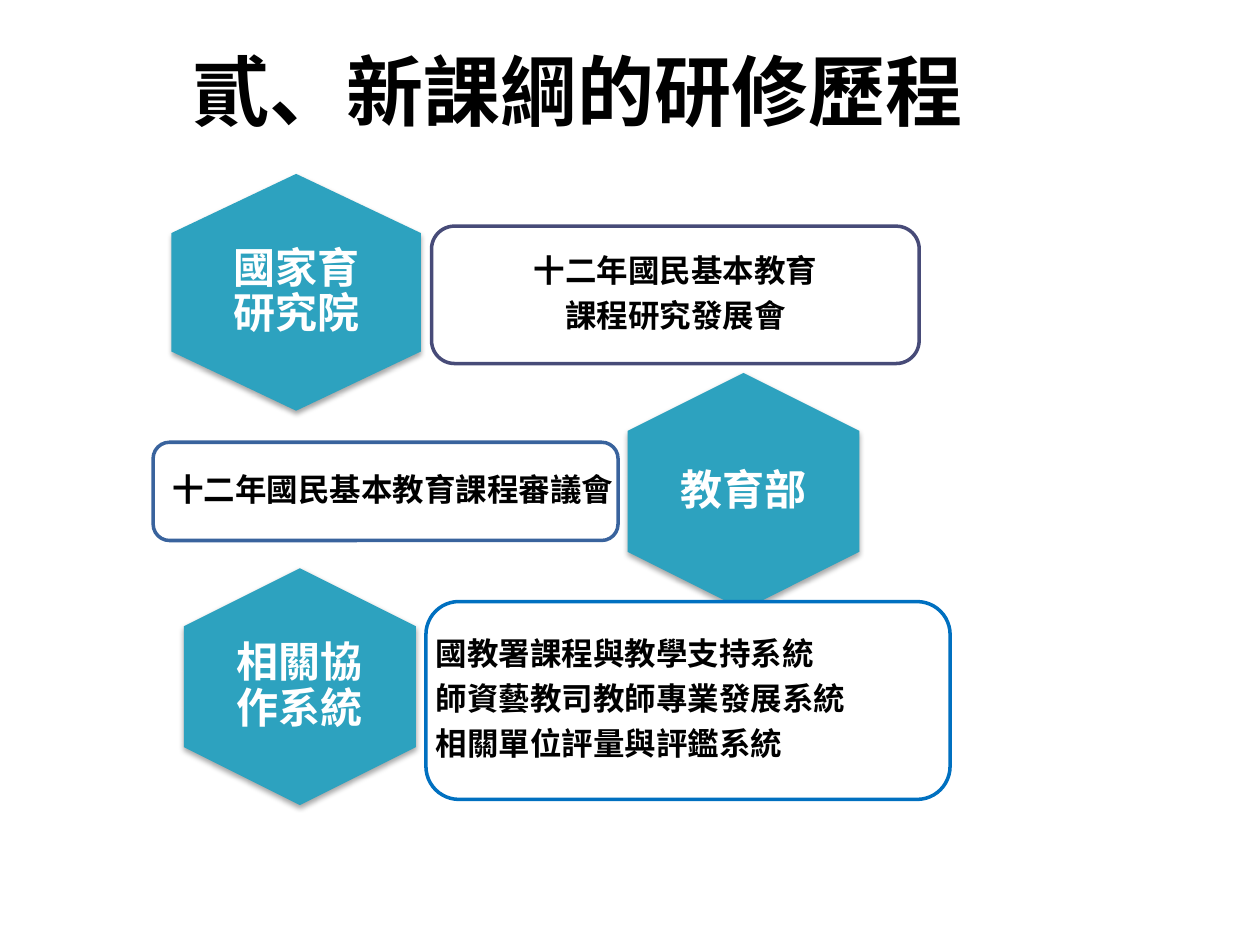
from lxml.etree import SubElement
from pptx import Presentation
from pptx.dml.color import RGBColor
from pptx.enum.shapes import MSO_SHAPE
from pptx.enum.text import MSO_ANCHOR, PP_ALIGN
from pptx.oxml import parse_xml
from pptx.oxml.ns import nsdecls, qn
from pptx.util import Inches, Pt

SOFT_SHADOW = (
    f'<a:effectLst {nsdecls("a")}>'
    '<a:outerShdw blurRad="39370" dist="22860" dir="5400000" rotWithShape="0">'
    '<a:srgbClr val="000000"><a:alpha val="35000"/></a:srgbClr>'
    '</a:outerShdw></a:effectLst>'
)


def color(hex_value):
    return RGBColor.from_string(hex_value)


class Deck:
    font_name = "Noto Sans CJK SC"
    accent, black, white = "2DA2BF", "000000", "FFFFFF"

    def __init__(self, slide):
        self.slide = slide

    def text(self, lines, box, size, ink, margin=0, align=PP_ALIGN.CENTER, **paragraph_format):
        frame = self.slide.shapes.add_textbox(*map(Inches, box)).text_frame
        frame.word_wrap = True
        frame.vertical_anchor = MSO_ANCHOR.MIDDLE
        for side in ("left", "right", "top", "bottom"):
            setattr(frame, f"margin_{side}", Inches(margin))
        frame.text = "\n".join(lines)
        for paragraph in frame.paragraphs:
            for name, value in {"alignment": align, **paragraph_format}.items():
                setattr(paragraph, name, value)
            run = paragraph.runs[0]
            for name, value in {"name": self.font_name, "size": Pt(size), "bold": True}.items():
                setattr(run.font, name, value)
            run.font.color.rgb = color(ink)
            SubElement(run.font._element, qn("a:ea"), typeface=self.font_name)
        return frame

    def centred_text(self, lines, center, size, font_size, ink, **options):
        (x, y), (width, height) = center, size
        box = (x - width / 2, y - height / 2, width, height)
        self.text(lines, box, font_size, ink, line_spacing=0.9,
                  space_after=Pt(round(0.35 * font_size, 1)), **options)

    def upright(self, kind, center, size, fill):
        """Add a preset turned by 90 degrees; size is as seen after the turn."""
        (x, y), (width, height) = center, size
        shape = self.slide.shapes.add_shape(
            kind, Inches(x - height / 2), Inches(y - width / 2), Inches(height), Inches(width))
        shape.rotation = 90
        shape.shadow.inherit = False
        shape.fill.solid()
        shape.fill.fore_color.rgb = color(fill)
        return shape

    def title(self, wording, box):
        frame = self.text([wording], box, 44, self.black, margin=0.05)
        frame.vertical_anchor = MSO_ANCHOR.TOP

    def organisation(self, name, center, width, height=1.88):
        hexagon = self.upright(MSO_SHAPE.HEXAGON, center, (height, width)[::-1], self.accent)
        hexagon.width, hexagon.height = Inches(height), Inches(width)
        hexagon.line.fill.background()
        properties = hexagon._element.spPr
        properties.replace(properties.find(qn("a:effectLst")), parse_xml(SOFT_SHADOW))
        self.centred_text([name], center, (width * 2 / 3, height * 2 / 3), 24, self.white, margin=0.1)

    def duties(self, lines, center, size, outline, align):
        panel = self.upright(MSO_SHAPE.ROUNDED_RECTANGLE, center, size, self.white)
        panel.line.color.rgb = color(outline)
        panel.line.width = Pt(2)
        width, height = size
        inset = 0.1 * height
        self.centred_text(lines, center, (width - inset, height - inset), 18, self.black, align=align)


def main():
    presentation = Presentation()
    presentation.slide_width, presentation.slide_height = Inches(10), Inches(7.5)
    deck = Deck(presentation.slides.add_slide(presentation.slide_layouts[6]))
    deck.title("貳、新課綱的研修歷程", (0.5, 0.3, 8.17, 1.25))

    stages = [
        (("國家育研究院", (2.35, 2.32), 1.98),
         (["十二年國民基本教育", "課程研究發展會"],
          (5.36, 2.34), (3.87, 1.09), "474B78", PP_ALIGN.CENTER)),
        (("教育部", (5.9, 3.9), 1.84),
         (["十二年國民基本教育課程審議會"],
          (3.06, 3.9), (3.69, 0.78), "39639D", PP_ALIGN.RIGHT)),
        (("相關協作系統", (2.38, 5.45), 1.84),
         (["國教署課程與教學支持系統", "師資藝教司教師專業發展系統", "相關單位評量與評鑑系統"],
          (5.46, 5.56), (4.16, 1.57), "0070C0", PP_ALIGN.LEFT)),
    ]
    for organisation, duties in stages:
        deck.organisation(*organisation)
        deck.duties(*duties)
    presentation.save("out.pptx")


if __name__ == "__main__":
    main()
